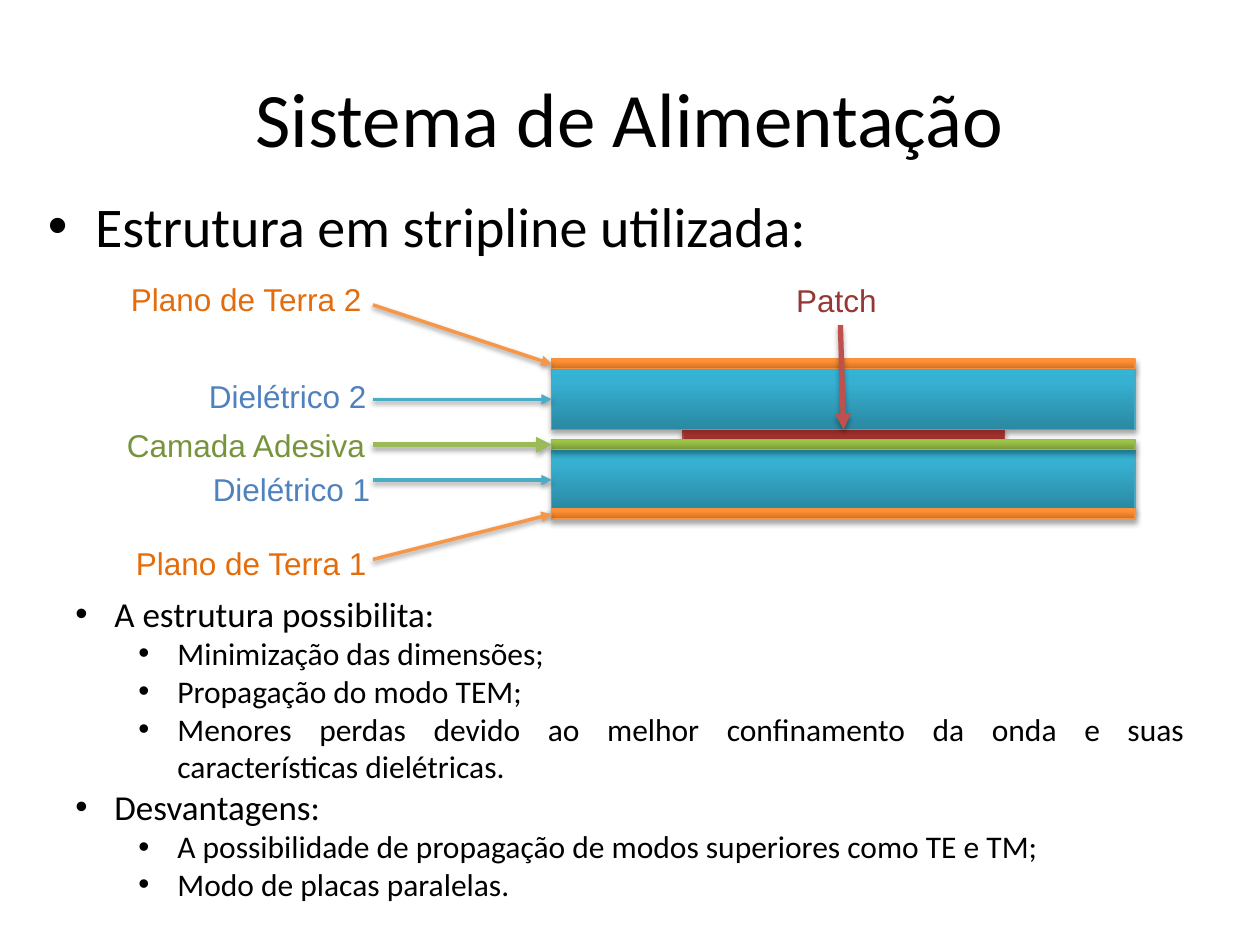
from copy import deepcopy

from lxml import etree
from pptx import Presentation
from pptx.dml.color import RGBColor
from pptx.enum.shapes import MSO_CONNECTOR as Link, MSO_SHAPE as Form
from pptx.enum.text import MSO_AUTO_SIZE as Fit, PP_ALIGN as Align
from pptx.oxml import parse_xml
from pptx.oxml.ns import nsdecls, qn
from pptx.util import Inches, Pt

BLACK = RGBColor(0x00, 0x00, 0x00)

# Gradient stops at 0, 80 and 100 %, then the outline
TEAL = [RGBColor(0x2A, 0x88, 0xA2), RGBColor(0x37, 0xB1, 0xD2),
        RGBColor(0x34, 0xB4, 0xD6), RGBColor(0x46, 0xAA, 0xC5)]
AMBER = [RGBColor(0xCC, 0x6E, 0x20), RGBColor(0xFF, 0x90, 0x34),
         RGBColor(0xFF, 0x91, 0x36), RGBColor(0xF6, 0x92, 0x40)]
RED = [RGBColor(0x9C, 0x2F, 0x2D), RGBColor(0xCB, 0x3E, 0x3A),
       RGBColor(0xCE, 0x3B, 0x37), RGBColor(0xBF, 0x4C, 0x48)]
GREEN = [RGBColor(0x77, 0x97, 0x37), RGBColor(0x9B, 0xC3, 0x48),
         RGBColor(0x9D, 0xC7, 0x46), RGBColor(0x98, 0xB9, 0x55)]

# Arrow and label colours
ORANGE = RGBColor(0xF7, 0x96, 0x46)
RUST = RGBColor(0xE4, 0x6C, 0x0A)
AQUA = RGBColor(0x4B, 0xAC, 0xC6)
BLUE = RGBColor(0x4F, 0x81, 0xBD)
LIME = RGBColor(0x9B, 0xBB, 0x59)
OLIVE = RGBColor(0x77, 0x93, 0x3C)
BRICK = RGBColor(0xC0, 0x50, 0x4D)
WINE = RGBColor(0x95, 0x37, 0x35)


def shade(item, dist, alpha):
    """Add a soft shadow below the item, once its line is set."""
    item._element.spPr.append(parse_xml(
        f'<a:effectLst {nsdecls("a")}>'
        f'<a:outerShdw blurRad="{Pt(3.1)}" dist="{Pt(dist)}" dir="5400000" rotWithShape="0">'
        f'<a:srgbClr val="000000"><a:alpha val="{alpha * 1000}"/></a:srgbClr>'
        '</a:outerShdw></a:effectLst>'))


def style(para, font, size, color):
    for run in para.runs:
        run.font.name = font
        run.font.size = Pt(size)
        run.font.color.rgb = color


prs = Presentation()
prs.slide_width, prs.slide_height = Inches(10), Inches(7.5)
slide = prs.slides.add_slide(prs.slide_layouts[1])
shapes = slide.shapes

# Title and lead line
title, body = shapes.title, slide.placeholders[1]
for holder, text, size, box in [
    (title, "Sistema de Alimentação", 44, (0.5, 0.3, 9, 1.25)),
    (body, "Estrutura em stripline utilizada:", 32, (0.28, 1.47, 9.37, 0.68)),
]:
    holder.left, holder.top, holder.width, holder.height = map(Inches, box)
    holder.text_frame.text = text
    style(holder.text_frame.paragraphs[0], "Calibri", size, BLACK)

# Stripline layers, from back to front
layers = {}
for name, left, top, width, height, tones in [
    ("diel1", 4.38, 3.57, 4.63, 0.48, TEAL),
    ("terra1", 4.38, 4.04, 4.63, 0.08, AMBER),
    ("patch", 5.42, 3.41, 2.55, 0.08, RED),
    ("terra2", 4.38, 2.85, 4.63, 0.08, AMBER),
    ("diel2", 4.38, 2.93, 4.63, 0.48, TEAL),
    ("glue", 4.38, 3.49, 4.63, 0.08, GREEN),
]:
    layer = shapes.add_shape(Form.RECTANGLE, Inches(left), Inches(top),
                             Inches(width), Inches(height))
    layer.fill.gradient()
    layer.fill.gradient_angle = 90
    first = layer._element.spPr.find(".//" + qn("a:gs"))
    first.addnext(deepcopy(first))
    for stop, spot, tone in zip(layer.fill.gradient_stops, (0, 0.8, 1), tones):
        stop.position = spot
        stop.color.rgb = tone
    layer.line.color.rgb = tones[3]
    layer.line.width = Pt(0.75)
    shade(layer, 1.8, 35)
    layers[name] = layer

# Labels with an arrow to their layer: arrow start, side, line, then text box
for name, text, x, y, side, tone, weight, box, ink in [
    ("terra2", "Plano de Terra 2", 2.96, 2.42, 1, ORANGE, 2, (0.94, 2.17, 2.22, 0.4), RUST),
    ("terra1", "Plano de Terra 1", 2.96, 4.44, 1, ORANGE, 2, (0.98, 4.27, 2.17, 0.4), RUST),
    ("diel2", "Dielétrico 2", 2.96, 3.17, 1, AQUA, 2, (1.56, 2.94, 1.47, 0.4), BLUE),
    ("diel1", "Dielétrico 1", 2.96, 3.81, 1, AQUA, 2, (1.59, 3.68, 1.49, 0.42), BLUE),
    ("glue", "Camada Adesiva", 2.96, 3.53, 1, LIME, 3, (0.91, 3.33, 2.2, 0.4), OLIVE),
    ("patch", "Patch", 6.67, 2.58, 0, BRICK, 3, (6.22, 2.18, 0.9, 0.4), WINE),
]:
    start = Inches(x), Inches(y)
    arrow = shapes.add_connector(Link.STRAIGHT, *start, *start)
    arrow.end_connect(layers[name], side)
    arrow.line.color.rgb = tone
    arrow.line.width = Pt(weight)
    etree.SubElement(arrow.line._get_or_add_ln(), qn("a:tailEnd"), type="triangle")
    if weight == 3:
        shade(arrow, 1.8, 35)
    else:
        shade(arrow, 1.6, 38)

    label = shapes.add_textbox(*map(Inches, box))
    frame = label.text_frame
    frame.word_wrap = True
    frame.auto_size = Fit.SHAPE_TO_FIT_TEXT
    frame.text = text
    style(frame.paragraphs[0], "Arial", 18, ink)

# Pros and cons
points = [
    (0, "A estrutura possibilita:"),
    (1, "Minimização das dimensões;"),
    (1, "Propagação do modo TEM;"),
    (1, "Menores perdas devido ao melhor confinamento da onda e suas "
        "características dielétricas."),
    (0, "Desvantagens:"),
    (1, "A possibilidade de propagação de modos superiores como TE e TM;"),
    (1, "Modo de placas paralelas."),
]
notes = shapes.add_textbox(Inches(0.5), Inches(4.65), Inches(9), Inches(2.63))
frame = notes.text_frame
frame.word_wrap = True
frame.auto_size = Fit.SHAPE_TO_FIT_TEXT
frame.text = "\n".join(text for level, text in points)
for para, (level, text) in zip(frame.paragraphs, points):
    para.level = level
    style(para, "Calibri", 18 if level else 20, BLACK)
    props = para._p.get_or_add_pPr()
    props.set("marL", str(Inches(0.31 + 0.5 * level)))
    props.set("indent", str(Inches(-0.31)))
    etree.SubElement(props, qn("a:buFont"), typeface="Arial")
    etree.SubElement(props, qn("a:buChar"), char="•")
frame.paragraphs[3].alignment = Align.JUSTIFY

prs.save("out.pptx")
